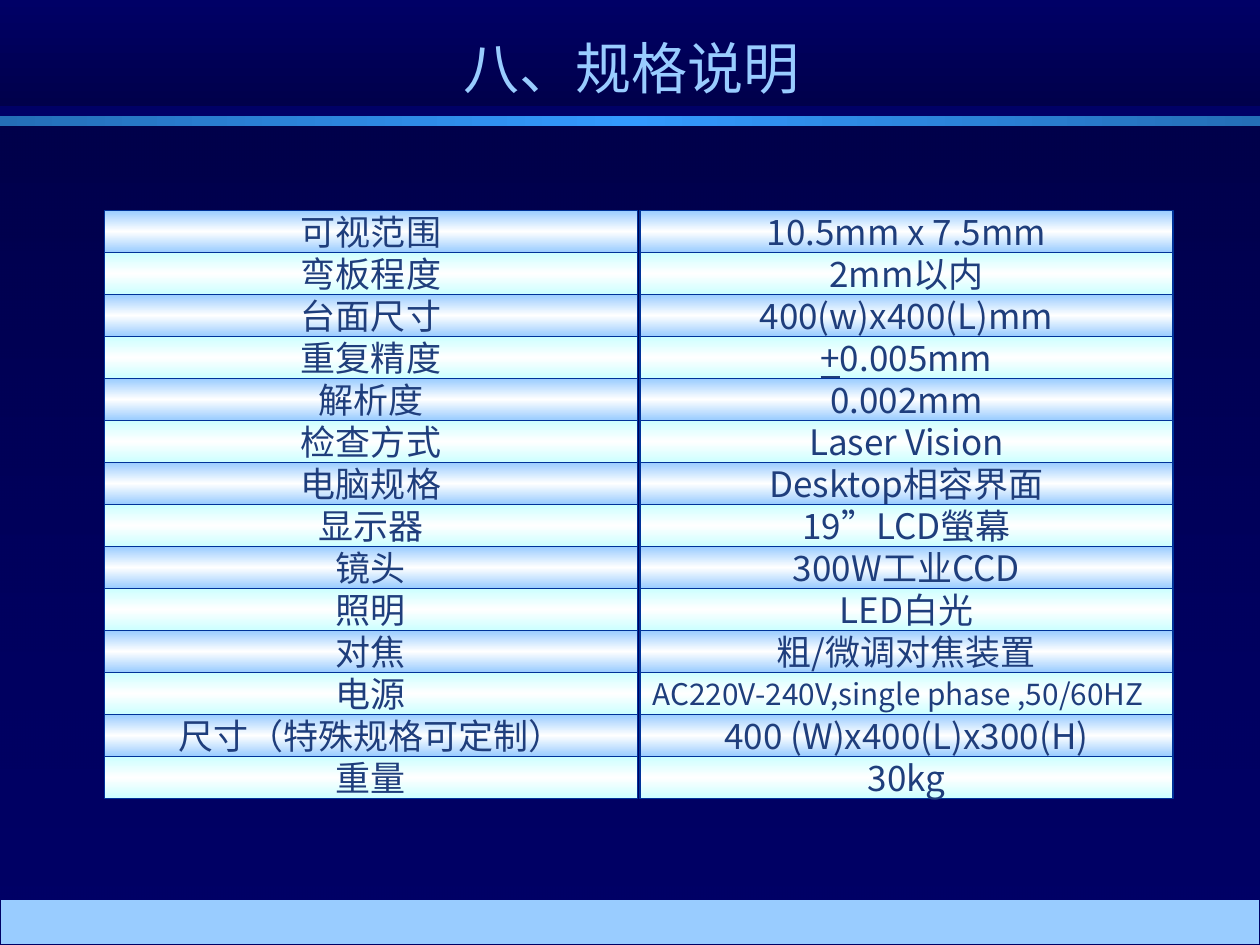
"""Build the specification slide: a title banner above a two-column grid."""
from dataclasses import dataclass

from lxml.etree import SubElement
from pptx import Presentation
from pptx.dml.color import RGBColor
from pptx.enum.shapes import MSO_SHAPE
from pptx.enum.text import MSO_ANCHOR, PP_ALIGN
from pptx.oxml import parse_xml
from pptx.oxml.ns import nsdecls, qn
from pptx.util import Inches, Pt


@dataclass(frozen=True)
class Theme:
    navy: str = "000066"
    sky: str = "99CCFF"
    ice: str = "CCFFFF"
    white: str = "FFFFFF"
    azure: str = "3399FF"
    border: str = "003399"
    ink: str = "1F3E7C"
    title_font: str = "DejaVu Sans"
    body_font: str = "Noto Sans CJK SC"
    title_size: int = 32
    body_size: int = 20
    small_size: int = 17
    border_width: float = 0.75


@dataclass(frozen=True)
class Stop:
    pos: int
    color: str
    shade: int = 100
    alpha: int = 100


@dataclass(frozen=True)
class Box:
    left: float
    top: float
    width: float
    height: float


@dataclass(frozen=True)
class Band:
    box: Box
    stops: tuple
    angle: int


@dataclass(frozen=True)
class Spec:
    label: str
    value: str
    underlined: str = ""
    size: int = Theme.body_size
    align: PP_ALIGN = PP_ALIGN.CENTER


THEME = Theme()
SLIDE_W, SLIDE_H = 10, 7.5
COL_LEFTS, GRID_TOP, COL_W, ROW_H = (0.83, 5.08), 1.67, 4.23, 1 / 3

NIGHT_SHADE, EDGE_SHADE = 50, 47
BANDS = (
    Band(Box(0, 0, SLIDE_W, 0.84),
         (Stop(0, THEME.navy), Stop(100, THEME.navy, NIGHT_SHADE)), 90),
    Band(Box(0, 0.99, SLIDE_W, 6.51),
         (Stop(0, THEME.navy, NIGHT_SHADE), Stop(100, THEME.navy, alpha=48)), 90),
    Band(Box(0, 0.92, SLIDE_W, 0.08),
         (Stop(0, THEME.azure, EDGE_SHADE), Stop(50, THEME.azure),
          Stop(100, THEME.azure, EDGE_SHADE)), 0),
)

SPECS = (
    Spec("可视范围", "10.5mm x 7.5mm"),
    Spec("弯板程度", "2mm以内"),
    Spec("台面尺寸", "400(w)x400(L)mm"),
    Spec("重复精度", "0.005mm", underlined="+"),
    Spec("解析度", "0.002mm"),
    Spec("检查方式", "Laser Vision"),
    Spec("电脑规格", "Desktop相容界面"),
    Spec("显示器", "19”LCD螢幕"),
    Spec("镜头", "300W工业CCD"),
    Spec("照明", "LED白光"),
    Spec("对焦", "粗/微调对焦装置"),
    Spec("电源", "AC220V-240V,single phase ,50/60HZ", size=THEME.small_size, align=PP_ALIGN.LEFT),
    Spec("尺寸（特殊规格可定制）", "400 (W)x400(L)x300(H)"),
    Spec("重量", "30kg"),
)


def gradient(stops: tuple, angle: int):
    """Return a linear gradient fill element."""
    marks = "".join(
        f'<a:gs pos="{stop.pos * 1000}"><a:srgbClr val="{stop.color}">'
        + (f'<a:shade val="{stop.shade * 1000}"/>' if stop.shade < 100 else "")
        + (f'<a:alpha val="{stop.alpha * 1000}"/>' if stop.alpha < 100 else "")
        + "</a:srgbClr></a:gs>"
        for stop in stops
    )
    return parse_xml(
        f'<a:gradFill {nsdecls("a")} rotWithShape="1"><a:gsLst>{marks}</a:gsLst>'
        f'<a:lin ang="{angle * 60000}" scaled="0"/></a:gradFill>'
    )


def add_rect(slide, box: Box, border: str = ""):
    """Add a rectangle without a shadow, outlined if a border colour is given."""
    lengths = (Inches(n) for n in (box.left, box.top, box.width, box.height))
    sp = slide.shapes.add_shape(MSO_SHAPE.RECTANGLE, *lengths)
    sp.shadow.inherit = False
    if border:
        sp.line.color.rgb = RGBColor.from_string(border)
        sp.line.width = Pt(THEME.border_width)
    else:
        sp.line.fill.background()
    return sp


def fill_gradient(sp, stops: tuple, angle: int) -> None:
    """Fill a shape with a gradient."""
    sp.fill.background()
    no_fill = sp._element.spPr.find(qn("a:noFill"))
    no_fill.getparent().replace(no_fill, gradient(stops, angle))


def add_run(p, text: str, color: str, **formats) -> None:
    """Add a run whose font takes the given format values."""
    r = p.add_run()
    r.text = text
    r.font.color.rgb = RGBColor.from_string(color)
    for name, value in formats.items():
        setattr(r.font, name, value)
    SubElement(r._r.get_or_add_rPr(), qn("a:ea"), typeface=formats["name"])


def first_paragraph(sp, align: PP_ALIGN):
    """Return a shape's first paragraph, set in the middle of its height."""
    tf = sp.text_frame
    tf.word_wrap = True
    tf.vertical_anchor = MSO_ANCHOR.MIDDLE
    p = tf.paragraphs[0]
    p.alignment = align
    return p


def add_title(slide, text: str) -> None:
    """Add the centred slide title."""
    sp = slide.shapes.add_textbox(Inches(0.25), Inches(0.17), Inches(9.52), Inches(0.73))
    p = first_paragraph(sp, PP_ALIGN.CENTER)
    add_run(p, text, THEME.sky, name=THEME.title_font, size=Pt(THEME.title_size))


def add_cell(slide, box: Box, edge: str, text: str, size: int = THEME.body_size,
             align: PP_ALIGN = PP_ALIGN.CENTER, underlined: str = "") -> None:
    """Add one grid cell, its text after an underlined sign if there is one."""
    sp = add_rect(slide, box, THEME.border)
    fill_gradient(sp, (Stop(0, edge), Stop(50, THEME.white), Stop(100, edge)), 90)
    p = first_paragraph(sp, align)
    formats = {"name": THEME.body_font, "size": Pt(size)}
    if underlined:
        add_run(p, underlined, THEME.ink, underline=True, **formats)
    add_run(p, text, THEME.ink, **formats)


def add_spec_grid(slide, specs: tuple) -> None:
    """Add the rows with alternating colours."""
    for i, spec in enumerate(specs):
        edge = THEME.ice if i % 2 else THEME.sky
        label_box, value_box = (
            Box(left, GRID_TOP + i * ROW_H, COL_W, ROW_H) for left in COL_LEFTS
        )
        add_cell(slide, label_box, edge, spec.label)
        add_cell(slide, value_box, edge, spec.value, spec.size, spec.align, spec.underlined)


def add_footer(slide) -> None:
    """Add the plain bar at the foot of the slide."""
    sp = add_rect(slide, Box(0, 7.14, SLIDE_W, 0.36), THEME.navy)
    sp.fill.solid()
    sp.fill.fore_color.rgb = RGBColor.from_string(THEME.sky)


def main() -> None:
    """Build and save the presentation."""
    prs = Presentation()
    prs.slide_width, prs.slide_height = Inches(SLIDE_W), Inches(SLIDE_H)
    s = prs.slides.add_slide(prs.slide_layouts[6])
    s.background.fill.solid()
    s.background.fill.fore_color.rgb = RGBColor.from_string(THEME.navy)
    for band in BANDS:
        fill_gradient(add_rect(s, band.box), band.stops, band.angle)
    add_title(s, "八、规格说明")
    add_spec_grid(s, SPECS)
    add_footer(s)
    prs.save("out.pptx")


if __name__ == "__main__":
    main()
